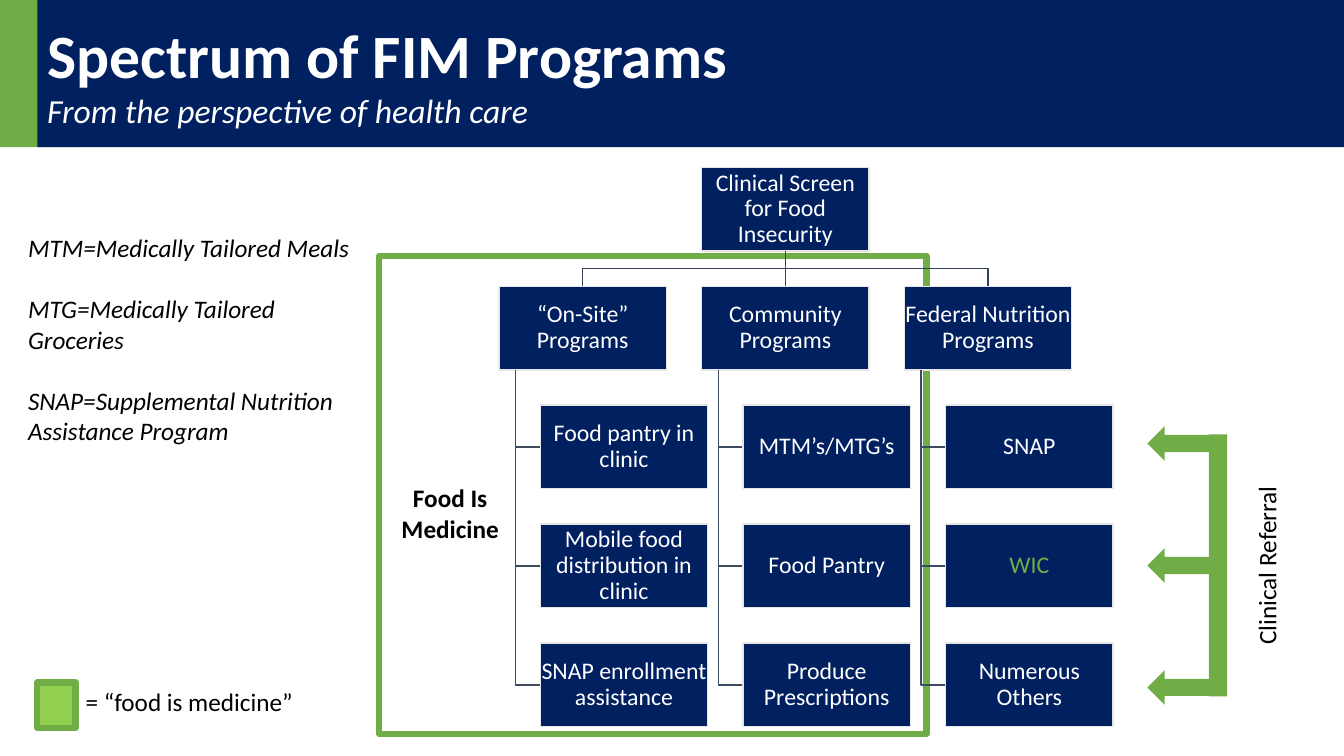
from lxml import etree
from pptx import Presentation
from pptx.dml.color import RGBColor
from pptx.enum import shapes, text
from pptx.oxml import ns
from pptx.util import Inches, Pt

NAVY = RGBColor(0x00, 0x20, 0x60)
GREEN = RGBColor(0x70, 0xAD, 0x47)
LIME = RGBColor(0x92, 0xD0, 0x50)
PALE = RGBColor(0xE7, 0xE6, 0xE6)
TRUNK = RGBColor(0x35, 0x42, 0x54)
BRANCH = RGBColor(0x3D, 0x4B, 0x5F)
WHITE = RGBColor(0xFF, 0xFF, 0xFF)
BLACK = RGBColor(0x00, 0x00, 0x00)
RECTANGLE = shapes.MSO_SHAPE.RECTANGLE

NODE_WIDTH, NODE_HEIGHT = 1.66, 0.83
COLUMN_STEP, ROW_STEP, INDENT = 2.01, 1.18, 0.41
PROGRAMS = [
    ("“On-Site” Programs", ["Food pantry in clinic", "Mobile food distribution in clinic",
                            "SNAP enrollment assistance"]),
    ("Community Programs", ["MTM’s/MTG’s", "Food Pantry", "Produce Prescriptions"]),
    ("Federal Nutrition Programs", ["SNAP", "WIC", "Numerous Others"]),
]
GLOSSARY = ["MTM=Medically Tailored Meals", "MTG=Medically Tailored Groceries",
            "SNAP=Supplemental Nutrition Assistance Program"]


def add_block(page, left, top, width, height, fill, line=None, line_width=1, kind=RECTANGLE):
    block = page.shapes.add_shape(kind, Inches(left), Inches(top), Inches(width), Inches(height))
    block.shadow.inherit = False
    block.fill.solid()
    block.fill.fore_color.rgb = fill
    if line is None:
        block.line.fill.background()
    else:
        block.line.color.rgb = line
        block.line.width = Pt(line_width)
    return block


def add_label(page, left, top, width, height):
    return page.shapes.add_textbox(Inches(left), Inches(top), Inches(width), Inches(height))


def write(box, wording, size=18, color=BLACK, bold=False, italic=False, centered=False,
          middle=False, inset=None, spacing=None, before=0):
    """Add one paragraph to the box, using its first paragraph while that is empty."""
    frame = box.text_frame
    frame.word_wrap = True
    frame.vertical_anchor = text.MSO_ANCHOR.MIDDLE if middle else text.MSO_ANCHOR.TOP
    if inset is not None:
        frame.margin_left = frame.margin_right = Inches(inset)
        frame.margin_top = frame.margin_bottom = Inches(inset)
    para = frame.add_paragraph() if frame.text else frame.paragraphs[0]
    para.alignment = text.PP_ALIGN.CENTER if centered else text.PP_ALIGN.LEFT
    para.space_before = Pt(before)
    if spacing:
        para.line_spacing = spacing
    span = para.add_run()
    span.text = wording
    font = span.font
    font.name, font.size, font.bold, font.italic = "Calibri", Pt(size), bold, italic
    font.color.rgb = color


def add_elbow(page, points, color):
    corners = [(Inches(x), Inches(y)) for x, y in points]
    builder = page.shapes.build_freeform(*corners[0])
    builder.add_line_segments(corners[1:], close=False)
    elbow = builder.convert_to_shape()
    elbow.shadow.inherit = False
    elbow.fill.background()
    elbow.line.color.rgb = color
    elbow.line.width = Pt(1)


def add_trunk(page, upper, lower):
    trunk = page.shapes.add_connector(shapes.MSO_CONNECTOR.STRAIGHT, 0, 0, 0, 0)
    trunk.begin_connect(upper, 2)
    trunk.end_connect(lower, 0)
    trunk.line.color.rgb = TRUNK
    trunk.line.width = Pt(1)
    etree.SubElement(trunk._element.spPr, ns.qn("a:effectLst"))


def add_node(page, left, top, wording, color=WHITE):
    node = add_block(page, left, top, NODE_WIDTH, NODE_HEIGHT, NAVY, PALE)
    write(node, wording, size=17, color=color, centered=True, middle=True,
          inset=0.01, spacing=0.9)
    return node


def add_header(page, left, top, width, height):
    add_block(page, left, top, 0.77, height, GREEN)
    banner = add_block(page, left + 0.37, top, width - 0.37, height, NAVY)
    write(banner, "Spectrum of FIM Programs", size=44, color=WHITE, bold=True, middle=True)
    write(banner, "From the perspective of health care", size=24, color=WHITE,
          italic=True, middle=True)


def add_medicine_frame(page, left, top, width, height):
    add_block(page, left, top, width, height, WHITE, GREEN, 4.5)
    caption = add_label(page, left + 0.12, top + 2.2, 1.17, 0.71)
    write(caption, "Food Is Medicine", bold=True, centered=True)


def add_program_tree(page, left, top):
    # Root over the middle column
    root_left = left + COLUMN_STEP
    root_center, root_bottom = root_left + NODE_WIDTH / 2, top + NODE_HEIGHT
    root = add_node(page, root_left, top, "Clinical Screen for Food Insecurity")
    head_top = top + ROW_STEP
    fork = (root_bottom + head_top) / 2

    for column, (heading, items) in enumerate(PROGRAMS):
        # Column heading and its link to the root
        head_left = left + column * COLUMN_STEP
        head = add_node(page, head_left, head_top, heading)
        center = head_left + NODE_WIDTH / 2
        if column == 1:
            add_trunk(page, root, head)
        else:
            add_elbow(page, [(root_center, root_bottom), (root_center, fork),
                             (center, fork), (center, head_top)], TRUNK)

        # Items hanging from the heading
        stem = head_left + NODE_WIDTH / 10
        item_left = head_left + INDENT
        for row, item in enumerate(items, start=1):
            item_top = head_top + row * ROW_STEP
            item_middle = item_top + NODE_HEIGHT / 2
            add_elbow(page, [(stem, head_top + NODE_HEIGHT), (stem, item_middle),
                             (item_left, item_middle)], BRANCH)
            add_node(page, item_left, item_top, item, GREEN if item == "WIC" else WHITE)


def add_referral(page, left, top):
    for offset in (0, 1.21, 2.42):
        add_block(page, left, top + offset, 0.61, 0.34, GREEN,
                  kind=shapes.MSO_SHAPE.LEFT_ARROW)
    add_block(page, left + 0.61, top + 0.08, 0.18, 2.6, GREEN)
    caption = add_label(page, left - 0.12, top + 1.18, 2.6, 0.4)
    caption.rotation = 270
    write(caption, "Clinical Referral", centered=True)


def add_legend(page, left, top):
    add_block(page, left, top, 0.38, 0.45, LIME, GREEN, 4.5)
    write(add_label(page, left + 0.38, top - 0.01, 3.51, 0.4), "= “food is medicine”")


def add_glossary(page, left, top, width, height):
    box = add_label(page, left, top, width, height)
    for index, entry in enumerate(GLOSSARY):
        write(box, entry, italic=True, before=22 if index else 0)


def main():
    deck = Presentation()
    deck.slide_width, deck.slide_height = Inches(13.33), Inches(7.5)
    page = deck.slides.add_slide(deck.slide_layouts[6])
    add_medicine_frame(page, 3.76, 2.54, 5.43, 4.74)
    add_header(page, 0, 0, 13.33, 1.46)
    add_program_tree(page, 4.95, 1.66)
    add_referral(page, 11.38, 4.23)
    add_legend(page, 0.37, 6.77)
    add_glossary(page, 0.18, 2.26, 3.4, 2.83)
    deck.save("out.pptx")


if __name__ == "__main__":
    main()
